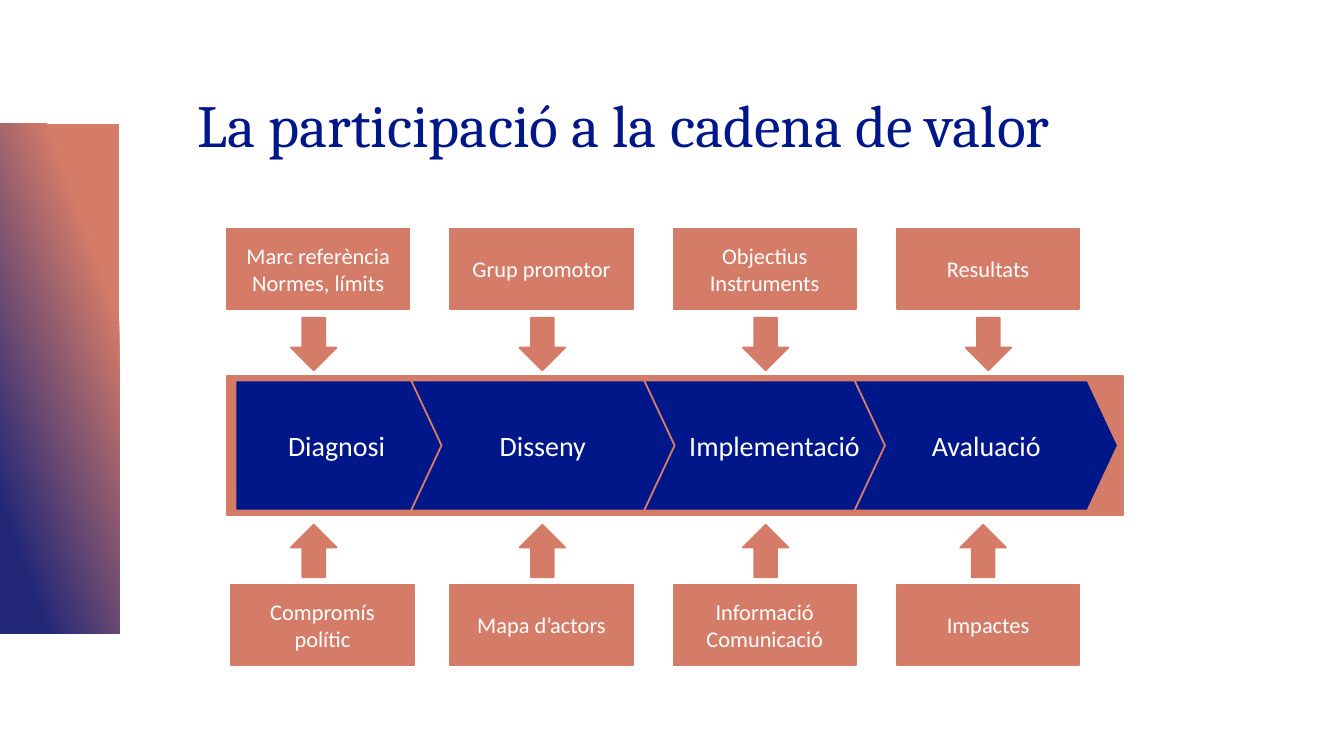
from pptx import Presentation
from pptx.dml.color import RGBColor
from pptx.enum.shapes import MSO_SHAPE
from pptx.enum.text import MSO_ANCHOR, PP_ALIGN
from pptx.util import Cm, Pt

RECT = MSO_SHAPE.RECTANGLE
PENTAGON = MSO_SHAPE.PENTAGON
CHEVRON = MSO_SHAPE.CHEVRON
DOWN = MSO_SHAPE.DOWN_ARROW
UP = MSO_SHAPE.UP_ARROW
MIDDLE, BOTTOM = MSO_ANCHOR.MIDDLE, MSO_ANCHOR.BOTTOM
CENTER = PP_ALIGN.CENTER

COLORS = {"blue": "001789", "coral": "D47C68", "indigo": "222778", "white": "FFFFFF"}


def rgb(name):
    return RGBColor.from_string(COLORS[name])


class Deck:
    body_font, title_font = "Calibri", "Cambria"

    def __init__(self, slide):
        self.s = slide

    def shape(self, kind, x, y, w, h, fill="coral"):
        sp = self.s.shapes.add_shape(kind, Cm(x), Cm(y), Cm(w), Cm(h))
        sp.shadow.inherit = False
        sp.fill.solid()
        sp.fill.fore_color.rgb = rgb(fill)
        sp.line.color.rgb = rgb("coral")
        sp.line.width = Pt(1)
        return sp

    def label(self, sp, text, size, left=0.25, right=0.25):
        """Centre text in a shape; left and right are insets in cm."""
        tf = sp.text_frame
        tf.word_wrap = True
        tf.vertical_anchor = MIDDLE
        tf.margin_left, tf.margin_right = Cm(left), Cm(right)
        tf.text = text
        for p in tf.paragraphs:
            p.alignment = CENTER
            p.font.size = Pt(size)
            p.font.name = self.body_font
            p.font.color.rgb = rgb("white")

    def box(self, x, y, text, inset=0.25):
        self.label(self.shape(RECT, x, y, 3.45, 1.52), text, 12, inset, inset)

    def arrow(self, kind, center, y):
        self.shape(kind, center - 0.43, y, 0.86, 0.99)

    def step(self, kind, x, w, text, left=0, right=0):
        sp = self.shape(kind, x, 7.19, w, 2.46, "blue")
        sp.adjustments[0] = 0.234
        self.label(sp, text, 15, left, right)

    def gradient_panel(self, x, y, w, h):
        sp = self.shape(RECT, x, y, w, h)
        sp.line.fill.background()
        sp.fill.gradient()
        sp.fill.gradient_angle = 200
        stops = (("coral", 0.23), ("indigo", 0.85))
        for stop, (color, position) in zip(sp.fill.gradient_stops, stops):
            stop.color.rgb = rgb(color)
            stop.position = position

    def title(self, text):
        tf = self.s.shapes.add_textbox(Cm(3.48), Cm(0.71), Cm(21.13), Cm(2.44)).text_frame
        tf.word_wrap = True
        tf.vertical_anchor = BOTTOM
        p = tf.paragraphs[0]
        p.text = text
        p.line_spacing = 0.9
        p.font.size = Pt(32)
        p.font.name = self.title_font
        p.font.color.rgb = rgb("blue")


def main():
    prs = Presentation()
    prs.slide_width, prs.slide_height = Cm(25.4), Cm(14.29)
    deck = Deck(prs.slides.add_slide(prs.slide_layouts[6]))

    deck.gradient_panel(0, 2.34, 2.26, 9.63)
    deck.title("La participació a la cadena de valor")
    deck.shape(RECT, 4.29, 7.11, 16.94, 2.62)

    # Chevrons overlap, so Disseny comes last to lie on top
    deck.step(PENTAGON, 4.45, 4.11, "Diagnosi", 0.25, 0.25)
    for i, text, left in ((1, "Implementació", 0.38), (2, "Avaluació", 0), (0, "Disseny", 0)):
        deck.step(CHEVRON, 7.77 + 4.19 * i, 4.98, text, left)

    # Text, box inset and arrow centre of each column
    inputs = (("Marc referència\vNormes, límits", 0.08, 5.93),
              ("Grup promotor", 0.25, 10.25),
              ("Objectius\vInstruments", 0.25, 14.47),
              ("Resultats", 0.25, 18.68))
    # Text, box shift and arrow centre of each column
    outputs = (("Compromís polític", 0.08, 5.93),
               ("Mapa d’actors", 0, 10.25),
               ("Informació\nComunicació", 0, 14.47),
               ("Impactes", 0, 18.58))
    for i, (above, below) in enumerate(zip(inputs, outputs)):
        x = 4.29 + 4.22 * i
        text, inset, center = above
        deck.box(x, 4.32, text, inset)
        deck.arrow(DOWN, center, 6.01)
        text, shift, center = below
        deck.box(x + shift, 11.05, text)
        deck.arrow(UP, center, 9.92)

    prs.save("out.pptx")


if __name__ == "__main__":
    main()
